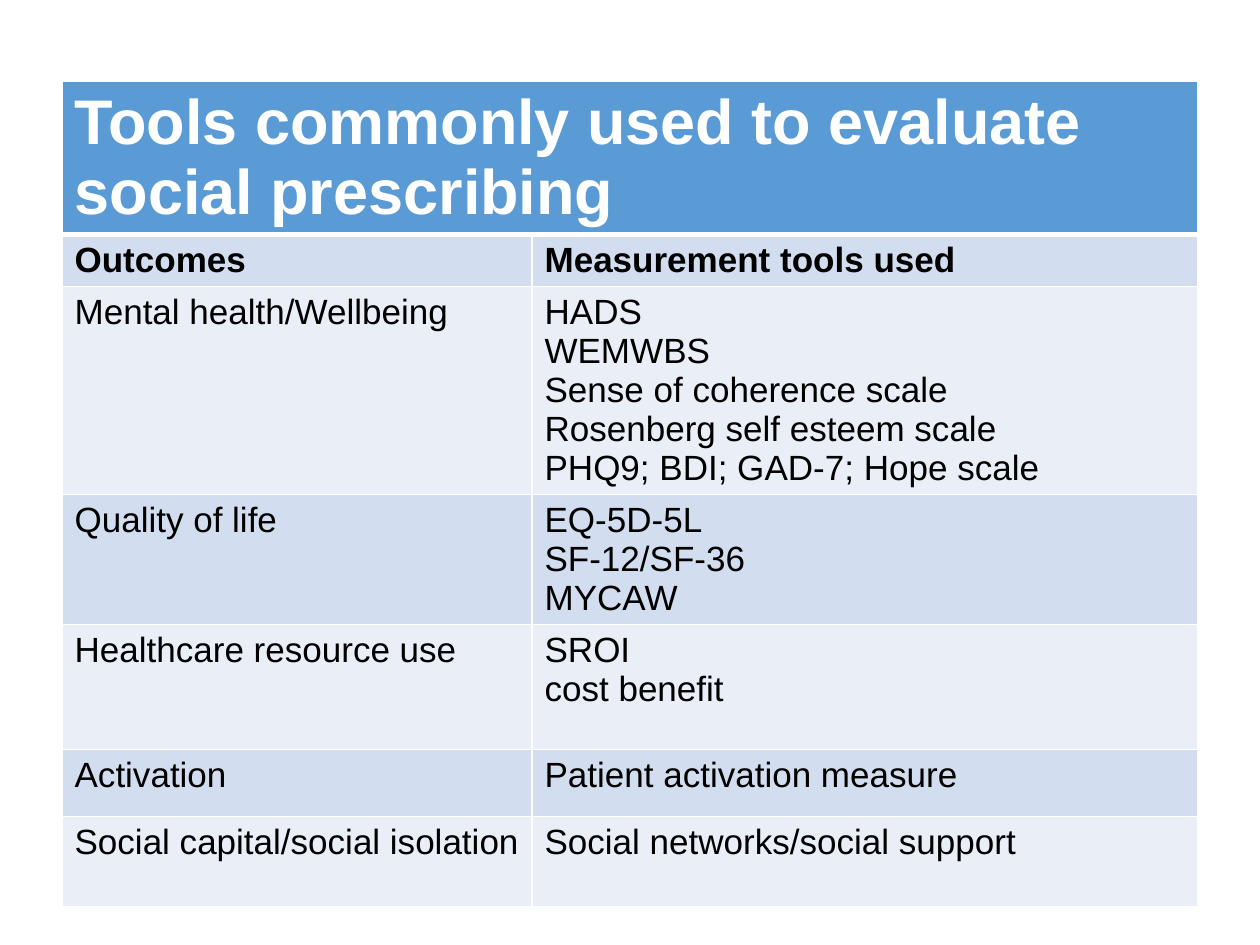
from typing import NamedTuple

from lxml import etree
from pptx import Presentation
from pptx.dml.color import RGBColor
from pptx.oxml.ns import qn
from pptx.table import _Cell
from pptx.util import Emu, Pt

EMU_PER_PX = 914400 // 126
SLIDE_SIZE = (1260, 945)
TABLE_LEFT, TABLE_TOP = 62, 81
COLUMN_WIDTHS = (470, 666)
TITLE_HEIGHT = 153

WHITE, BLACK, BLUE = "FFFFFF", "000000", "5B9BD5"
BANDS = ("D2DEEF", "EAEFF7")
BORDER_POINTS = {"a:lnL": 1, "a:lnR": 1, "a:lnT": 1, "a:lnB": 1}
TITLE_BORDER_POINTS = {**BORDER_POINTS, "a:lnB": 3}
TITLE_FORMAT = {"name": "Arial", "size": Pt(36), "bold": True}
HEADING_FORMAT = {"name": "Arial", "size": Pt(20), "bold": True}
BODY_FORMAT = {**HEADING_FORMAT, "bold": False}

TITLE = "Tools commonly used to evaluate social prescribing"


class OutcomeRow(NamedTuple):
    height: int
    outcome: str
    tools: str
    text_format: dict = BODY_FORMAT


ROWS = (
    OutcomeRow(51, "Outcomes", "Measurement tools used", HEADING_FORMAT),
    OutcomeRow(208, "Mental health/Wellbeing",
               "HADS\nWEMWBS\nSense of coherence scale\n"
               "Rosenberg self esteem scale\nPHQ9; BDI; GAD-7; Hope scale"),
    OutcomeRow(130, "Quality of life", "EQ-5D-5L\nSF-12/SF-36\nMYCAW"),
    OutcomeRow(125, "Healthcare resource use", "SROI\ncost benefit"),
    OutcomeRow(67, "Activation", "Patient activation measure"),
    OutcomeRow(90, "Social capital/social isolation", "Social networks/social support"),
)


def px(length: int) -> Emu:
    return Emu(length * EMU_PER_PX)


def color(value: str) -> RGBColor:
    return RGBColor.from_string(value)


def set_borders(cell: _Cell, widths: dict[str, int]) -> None:
    """Put white lines before the cell fill, as the schema orders them."""
    properties = cell._tc.get_or_add_tcPr()
    for index, (tag, points) in enumerate(widths.items()):
        line = etree.Element(qn(tag), w=str(Pt(points)))
        fill = etree.SubElement(line, qn("a:solidFill"))
        etree.SubElement(fill, qn("a:srgbClr"), val=WHITE)
        properties.insert(index, line)


def fill_cell(cell: _Cell, text: str, background: str, text_color: str,
              text_format: dict, borders: dict[str, int]) -> None:
    cell.fill.solid()
    cell.fill.fore_color.rgb = color(background)
    set_borders(cell, borders)
    cell.text = text
    for para in cell.text_frame.paragraphs:
        for span in para.runs:
            span.font.color.rgb = color(text_color)
            for name, value in text_format.items():
                setattr(span.font, name, value)


def add_outcome_table(page) -> None:
    heights = [TITLE_HEIGHT] + [row.height for row in ROWS]
    table = page.shapes.add_table(
        len(heights), len(COLUMN_WIDTHS), px(TABLE_LEFT), px(TABLE_TOP),
        px(sum(COLUMN_WIDTHS)), px(sum(heights))).table
    for column, width in zip(table.columns, COLUMN_WIDTHS):
        column.width = px(width)
    for table_row, height in zip(table.rows, heights):
        table_row.height = px(height)

    title_cell = table.cell(0, 0)
    title_cell.merge(table.cell(0, 1))
    fill_cell(title_cell, TITLE, BLUE, WHITE, TITLE_FORMAT, TITLE_BORDER_POINTS)
    for index, row in enumerate(ROWS):
        borders = BORDER_POINTS if index else {**BORDER_POINTS, "a:lnT": 3}
        for column, text in enumerate((row.outcome, row.tools)):
            fill_cell(table.cell(index + 1, column), text, BANDS[index % 2],
                      BLACK, row.text_format, borders)


def main() -> None:
    deck = Presentation()
    deck.slide_width, deck.slide_height = map(px, SLIDE_SIZE)
    page = deck.slides.add_slide(deck.slide_layouts[6])
    add_outcome_table(page)
    deck.save("out.pptx")


if __name__ == "__main__":
    main()
